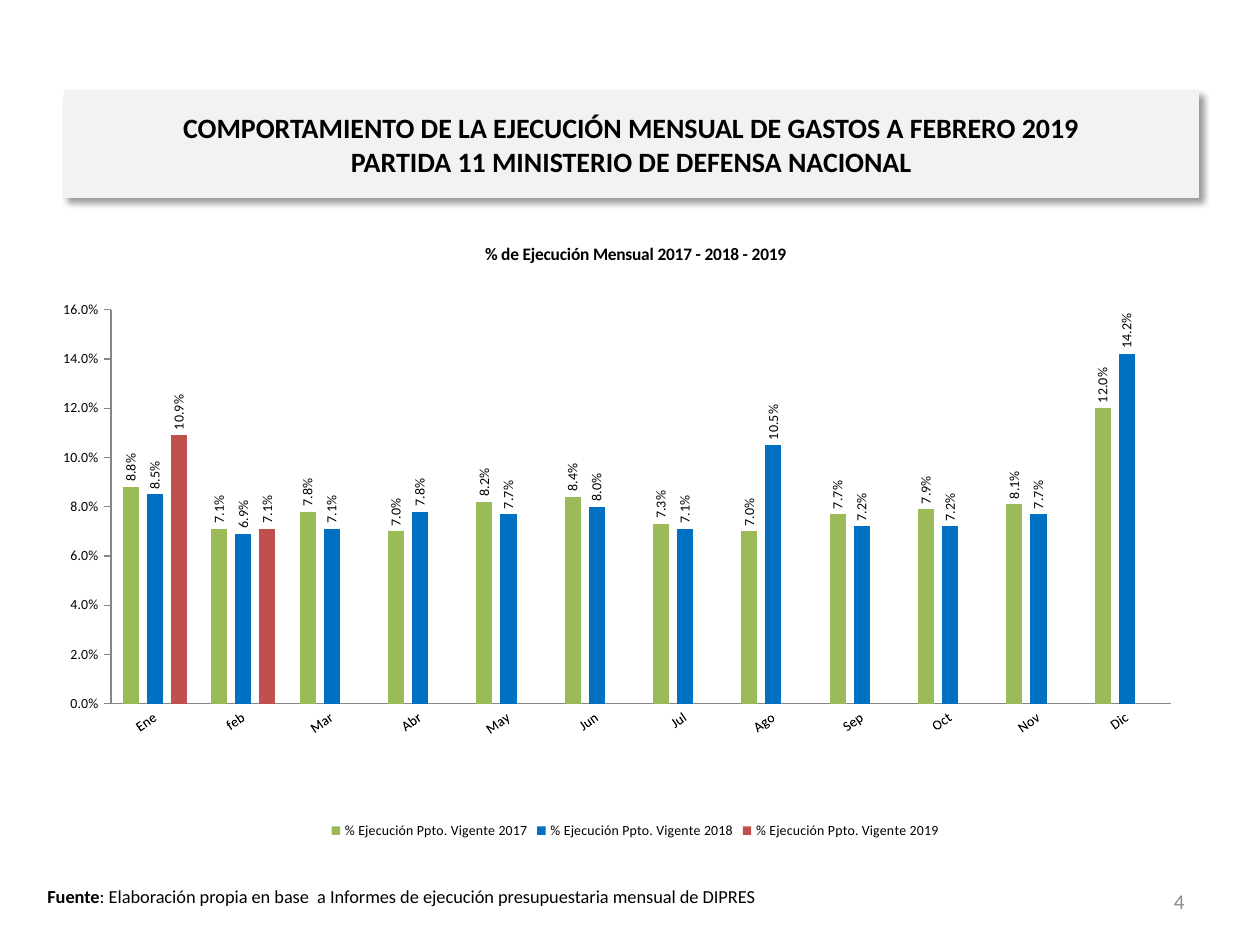
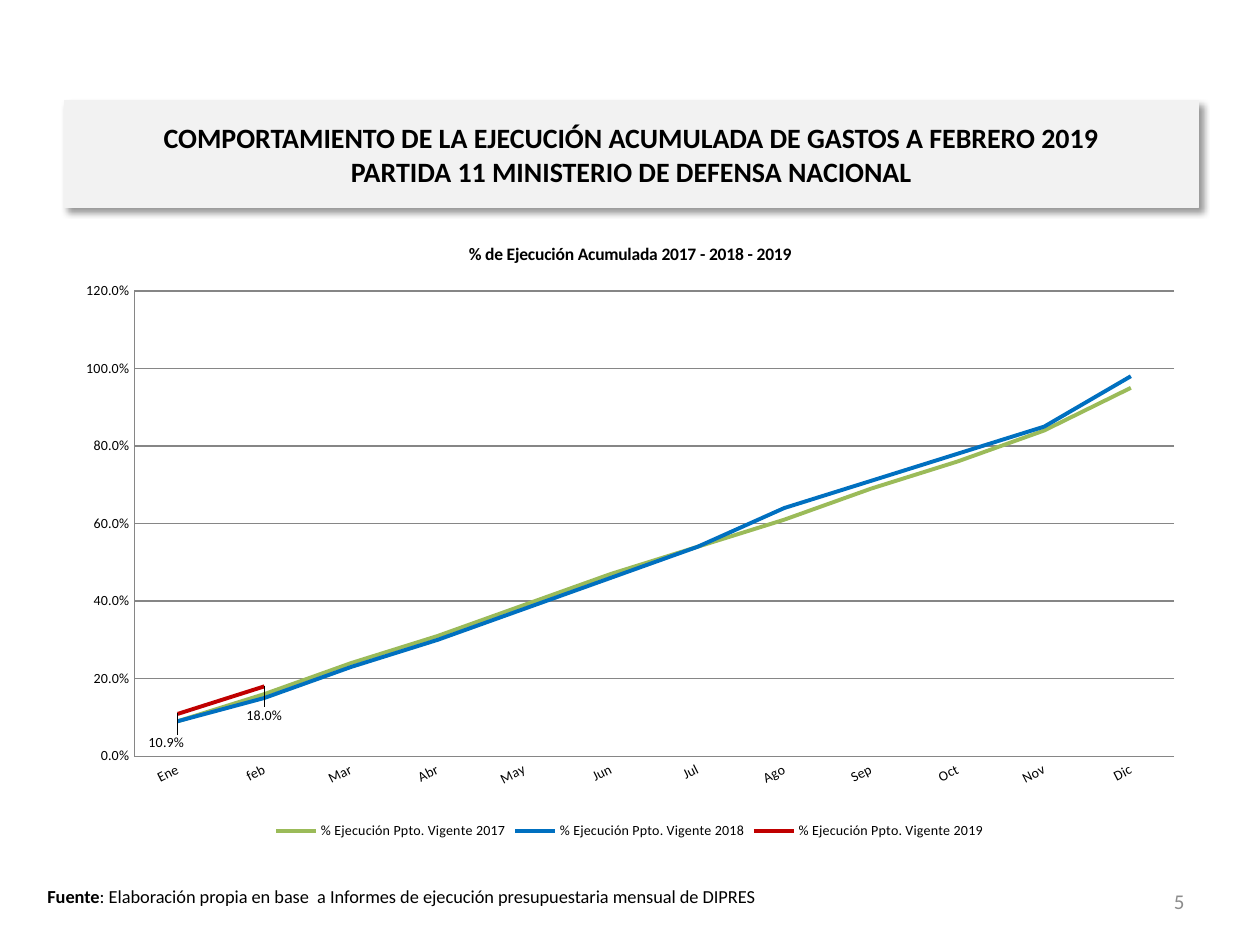
from lxml import etree
from pptx import Presentation
from pptx.chart.data import CategoryChartData
from pptx.dml.color import RGBColor
from pptx.enum.chart import XL_CHART_TYPE, XL_LABEL_POSITION, XL_LEGEND_POSITION, XL_TICK_MARK
from pptx.enum.text import MSO_ANCHOR, MSO_AUTO_SIZE, PP_ALIGN
from pptx.oxml import parse_xml
from pptx.oxml.ns import nsdecls, qn
from pptx.util import Pt

COLUMNS, LINES = XL_CHART_TYPE.COLUMN_CLUSTERED, XL_CHART_TYPE.LINE
ABOVE, BELOW = XL_LABEL_POSITION.OUTSIDE_END, XL_LABEL_POSITION.BELOW
NO_TICK, OUTER_TICK = XL_TICK_MARK.NONE, XL_TICK_MARK.OUTSIDE
LEFT, CENTER, RIGHT = PP_ALIGN.LEFT, PP_ALIGN.CENTER, PP_ALIGN.RIGHT
TOP, MIDDLE = MSO_ANCHOR.TOP, MSO_ANCHOR.MIDDLE

FONT = "Calibri"
PERCENT = "0.0%"
COLORS = {
    "text": "000000", "band": "F2F2F2", "number": "8C8C8C", "axis": "868686",
    "green": "9BBB59", "blue": "0070C0", "coral": "C0504D", "red": "C00000",
}
MONTHS = ["Ene", "feb", "Mar", "Abr", "May", "Jun", "Jul", "Ago", "Sep", "Oct", "Nov", "Dic"]
FIRST_YEAR = 2017
SERIES_NAME = "% Ejecución Ppto. Vigente {}"
SOURCE = [("Fuente", True),
          (": Elaboración propia en base  a Informes de ejecución presupuestaria mensual de DIPRES", False)]
PARTIDA = "PARTIDA 11 MINISTERIO DE DEFENSA NACIONAL"
LABEL_SHIFTS = [(-0.01, 0.025), (0, 0.025)]

SLIDES = [
    {
        "number": "4", "band_top": 52,
        "title": "COMPORTAMIENTO DE LA EJECUCIÓN MENSUAL DE GASTOS A FEBRERO 2019",
        "chart_title": "% de Ejecución Mensual 2017 - 2018 - 2019",
        "kind": COLUMNS, "colors": ["green", "blue", "coral"],
        "values": [
            [0.088, 0.071, 0.078, 0.07, 0.082, 0.084, 0.073, 0.07, 0.077, 0.079, 0.081, 0.12],
            [0.085, 0.069, 0.071, 0.078, 0.077, 0.08, 0.071, 0.105, 0.072, 0.072, 0.077, 0.142],
            [0.109, 0.071],
        ],
        "maximum": 0.16, "step": 0.02, "tick": OUTER_TICK, "month_angle": -35,
        "plot_area": (0.033, 0.143, 0.944, 0.632),
    },
    {
        "number": "5", "band_top": 57.6,
        "title": "COMPORTAMIENTO DE LA EJECUCIÓN ACUMULADA DE GASTOS A FEBRERO 2019",
        "chart_title": "% de Ejecución Acumulada 2017 - 2018 - 2019",
        "kind": LINES, "colors": ["green", "blue", "red"],
        "values": [
            [0.09, 0.16, 0.24, 0.31, 0.39, 0.47, 0.54, 0.61, 0.69, 0.76, 0.84, 0.95],
            [0.09, 0.15, 0.23, 0.3, 0.38, 0.46, 0.54, 0.64, 0.71, 0.78, 0.85, 0.98],
            [0.109, 0.18],
        ],
        "maximum": 1.2, "step": 0.2, "tick": NO_TICK, "month_angle": -27,
        "plot_area": (0.063, 0.113, 0.917, 0.746),
    },
]


def color(name):
    return RGBColor.from_string(COLORS[name])


def style_font(font, size, bold=False, tint="text"):
    font.name, font.size, font.bold = FONT, Pt(size), bold
    font.color.rgb = color(tint)


def rotate_text(element, degrees):
    body = element.find(f".//{qn('a:bodyPr')}")
    body.set("rot", str(degrees * 60000))
    body.set("vert", "horz")


def add_shadow(shape):
    shape._element.spPr.append(parse_xml(
        f'<a:effectLst {nsdecls("a")}><a:outerShdw blurRad="{Pt(4)}" dist="{Pt(3)}" dir="2700000" '
        'algn="tl" rotWithShape="0"><a:srgbClr val="000000"><a:alpha val="40000"/></a:srgbClr>'
        '</a:outerShdw></a:effectLst>'))


def set_layout(parent, index, settings):
    old = parent.find(qn("c:layout"))
    if old is not None:
        parent.remove(old)
    layout = etree.Element(qn("c:layout"))
    manual = etree.SubElement(layout, qn("c:manualLayout"))
    for tag, value in settings:
        etree.SubElement(manual, qn(f"c:{tag}")).set("val", str(value))
    parent.insert(index, layout)


def place_plot(chart, area):
    edges = [("layoutTarget", "inner"), ("xMode", "edge"), ("yMode", "edge")]
    set_layout(chart._chartSpace.chart.plotArea, 0, [*edges, *zip("xywh", area)])


def add_title(page, content):
    title = page.shapes.title
    title.left, title.top, title.width, title.height = Pt(36.7), Pt(content["band_top"]), Pt(648), Pt(61)
    title.fill.solid()
    title.fill.fore_color.rgb = color("band")
    title.line.color.rgb = color("band")
    title.line.width = Pt(0.75)
    add_shadow(title)
    frame = title.text_frame
    frame.text = "\v".join([content["title"], PARTIDA])
    frame.auto_size = MSO_AUTO_SIZE.NONE
    frame.word_wrap = True
    frame.vertical_anchor = MIDDLE
    para = frame.paragraphs[0]
    para.alignment = CENTER
    for span in para.runs:
        style_font(span.font, 16, True)


def add_text(page, place, spans, size, tint="text", align=LEFT, anchor=TOP):
    frame = page.shapes.add_textbox(*map(Pt, place)).text_frame
    frame.word_wrap = True
    frame.vertical_anchor = anchor
    para = frame.paragraphs[0]
    para.alignment = align
    for text, bold in spans:
        span = para.add_run()
        span.text = text
        style_font(span.font, size, bold, tint)


def add_labels(series, position):
    labels = series.data_labels
    labels.show_value = True
    labels.number_format, labels.number_format_is_linked = PERCENT, False
    labels.position = position
    style_font(labels.font, 8)
    return labels


def shift_labels(series):
    for index, shift in enumerate(LABEL_SHIFTS):
        label = series.points[index].data_label
        style_font(label.font, 8)
        label.position = BELOW
        element = series.data_labels._element.findall(qn("c:dLbl"))[index]
        set_layout(element, 1, zip("xy", shift))
        number_format = etree.Element(qn("c:numFmt"), formatCode=PERCENT, sourceLinked="0")
        element.insert(2, number_format)


def style_axes(chart, content):
    months, shares = chart.category_axis, chart.value_axis
    months.major_tick_mark, shares.major_tick_mark = NO_TICK, content["tick"]
    shares.minimum_scale, shares.maximum_scale = 0, content["maximum"]
    shares.major_unit = content["step"]
    shares.tick_labels.number_format = PERCENT
    shares.tick_labels.number_format_is_linked = False
    shares.has_major_gridlines = content["kind"] == LINES
    strokes = [months.format.line, shares.format.line]
    if shares.has_major_gridlines:
        strokes.append(shares.major_gridlines.format.line)
    for stroke in strokes:
        stroke.color.rgb = color("axis")
        stroke.width = Pt(0.75)
    for axis in (months, shares):
        axis.minor_tick_mark = NO_TICK
        style_font(axis.tick_labels.font, 8)
    rotate_text(months._element.find(qn("c:txPr")), content["month_angle"])


def style_series(plot, content):
    for series, tint in zip(plot.series, content["colors"]):
        if content["kind"] == COLUMNS:
            series.format.fill.solid()
            series.format.fill.fore_color.rgb = color(tint)
            labels = add_labels(series, ABOVE)
            rotate_text(labels._element, -90)
        else:
            series.smooth = False
            series.format.line.color.rgb = color(tint)
            series.format.line.width = Pt(2.25)
    if content["kind"] == COLUMNS:
        plot.gap_width, plot.overlap = 150, -49
    else:
        current_year = plot.series[-1]
        add_labels(current_year, BELOW)
        shift_labels(current_year)


def add_execution_chart(page, content):
    data = CategoryChartData(number_format=PERCENT)
    data.categories = MONTHS
    for year, values in enumerate(content["values"], FIRST_YEAR):
        data.add_series(SERIES_NAME.format(year), values + [None] * (len(MONTHS) - len(values)))
    chart = page.shapes.add_chart(content["kind"], Pt(36), Pt(126), Pt(648), Pt(356.4), data).chart
    style_font(chart.font, 10)
    chart.has_title = True
    heading = chart.chart_title.text_frame
    heading.text = content["chart_title"]
    style_font(heading.paragraphs[0].runs[0].font, 10, True)
    chart.chart_title.include_in_layout = False
    chart.has_legend = True
    chart.legend.position = XL_LEGEND_POSITION.BOTTOM
    chart.legend.include_in_layout = False
    style_font(chart.legend.font, 8)
    chart.plots[0].vary_by_categories = False
    style_axes(chart, content)
    style_series(chart.plots[0], content)
    place_plot(chart, content["plot_area"])


def main():
    deck = Presentation()
    deck.slide_width, deck.slide_height = Pt(720), Pt(540)
    for content in SLIDES:
        page = deck.slides.add_slide(deck.slide_layouts[5])
        add_text(page, (516, 500.5, 168, 28.75), [(content["number"], False)], 12, "number", RIGHT, MIDDLE)
        add_title(page, content)
        add_text(page, (20, 502.5, 662, 22), SOURCE, 10.5)
        add_execution_chart(page, content)
    deck.save("out.pptx")


if __name__ == "__main__":
    main()
